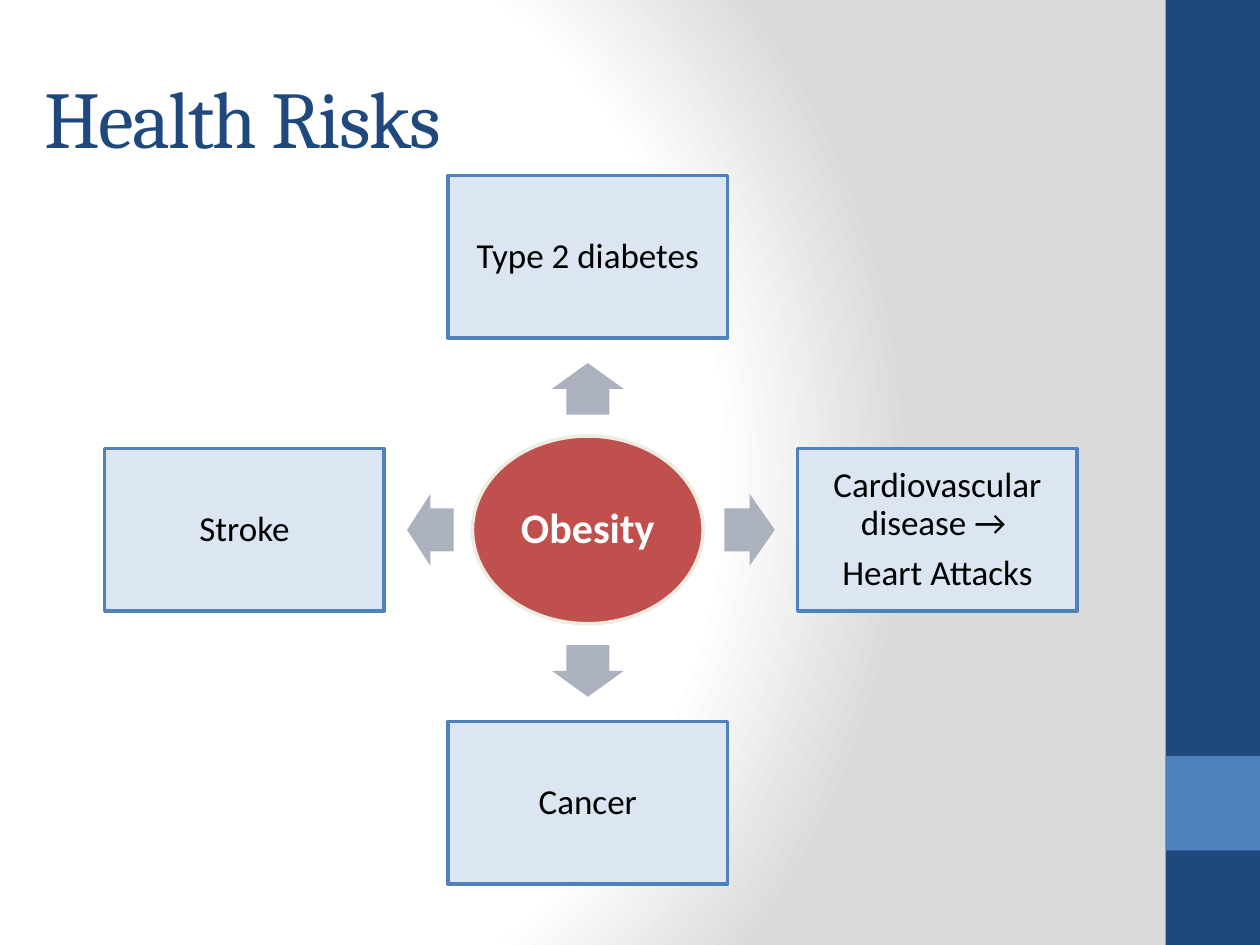
from lxml import etree
from pptx import Presentation
from pptx.dml.color import RGBColor
from pptx.enum.shapes import MSO_SHAPE as Kind
from pptx.enum.text import MSO_ANCHOR as Anchor, PP_ALIGN as Align
from pptx.oxml.ns import nsdecls
from pptx.util import Pt

NAVY, BLUE, PALE, GREY = "1F497D", "4F81BD", "DCE6F2", "ACB1BF"
RED, CREAM, WHITE, BLACK = "C0504D", "EEECE1", "FFFFFF", "000000"
TITLE = "Health Risks"
HUB = "Obesity"
MID = (335.9, 302.8)
BOX = (159.8, 92.9)
RISKS = [
    {"text": ["Type 2 diabetes"], "way": (0, -1), "far": 156, "near": 80.6, "long": 29.5, "turn": 270},
    {"text": ["Cardiovascular disease → ", "Heart Attacks"], "way": (1, 0), "far": 199.8, "near": 92.5, "long": 28.8, "turn": 0},
    {"text": ["Cancer"], "way": (0, 1), "far": 156, "near": 80.6, "long": 29.5, "turn": 90},
    {"text": ["Stroke"], "way": (-1, 0), "far": 196.2, "near": 90, "long": 26.6, "turn": 180},
]
STOPS = [(0, WHITE), (75, WHITE), (100, "DADADA")]


def tint(color, code):
    color.rgb = RGBColor.from_string(code)


def draw(kind, left, top, wide, high, fill, edge=None):
    shape = slide.shapes.add_shape(kind, Pt(left), Pt(top), Pt(wide), Pt(high))
    shape.shadow.inherit = False
    shape.fill.solid()
    tint(shape.fill.fore_color, fill)
    if edge:
        tint(shape.line.color, edge)
        shape.line.width = Pt(2)
    else:
        shape.line.fill.background()
    return shape


def place(kind, way, far, size, fill, edge=None):
    left, top = (m + w * far - s / 2 for m, w, s in zip(MID, way, size))
    return draw(kind, left, top, *size, fill, edge)


def style(run, name, size, code, bold=False):
    run.font.name, run.font.size, run.font.bold = name, Pt(size), bold
    tint(run.font.color, code)


def write(shape, lines, size, code, bold=False):
    frame = shape.text_frame
    frame.word_wrap = True
    frame.vertical_anchor = Anchor.MIDDLE
    frame.margin_left = frame.margin_right = Pt(2)
    frame.margin_top = frame.margin_bottom = Pt(2)
    for i, line in enumerate(lines):
        para = frame.add_paragraph() if i else frame.paragraphs[0]
        para.alignment = Align.CENTER
        para.line_spacing = 0.9
        para.space_before = Pt(size * 0.35 if i else 0)
        run = para.add_run()
        run.text = line
        style(run, "Calibri", size, code, bold)


def shade():
    slide.background.fill.solid()
    old = slide.element.xpath("p:cSld/p:bg/p:bgPr/a:solidFill")[0]
    stops = "".join(
        f'<a:gs pos="{at * 1000}"><a:srgbClr val="{code}"/></a:gs>' for at, code in STOPS)
    new = etree.fromstring(
        f'<a:gradFill {nsdecls("a")} rotWithShape="1"><a:gsLst>{stops}</a:gsLst>'
        '<a:path path="circle"><a:fillToRect l="20000" t="50000" r="100000" b="50000"/>'
        '</a:path></a:gradFill>')
    old.getparent().replace(old, new)


def head():
    title = slide.shapes.title
    title.left, title.top, title.width, title.height = Pt(18), Pt(21.6), Pt(599.8), Pt(90)
    title.text_frame.vertical_anchor = Anchor.MIDDLE
    para = title.text_frame.paragraphs[0]
    para.alignment = Align.LEFT
    run = para.add_run()
    run.text = TITLE
    style(run, "Cambria", 46, NAVY)
    run.font._element.set("spc", "-100")


deck = Presentation()
deck.slide_width, deck.slide_height = Pt(720), Pt(540)
slide = deck.slides.add_slide(deck.slide_layouts[5])
shade()
draw(Kind.RECTANGLE, 666, 0, 54, 540, NAVY)
draw(Kind.RECTANGLE, 666, 432, 54, 54, BLUE)
head()
write(place(Kind.OVAL, (0, 0), 0, (131.8, 107.3), RED, CREAM), [HUB], 24, WHITE, True)
for risk in RISKS:
    arrow = place(Kind.RIGHT_ARROW, risk["way"], risk["near"], (risk["long"], 41), GREY)
    arrow.rotation = risk["turn"]
    arrow.adjustments[0], arrow.adjustments[1] = 0.6, 0.5
    box = place(Kind.RECTANGLE, risk["way"], risk["far"], BOX, PALE, BLUE)
    write(box, risk["text"], 20, BLACK)
deck.save("out.pptx")
